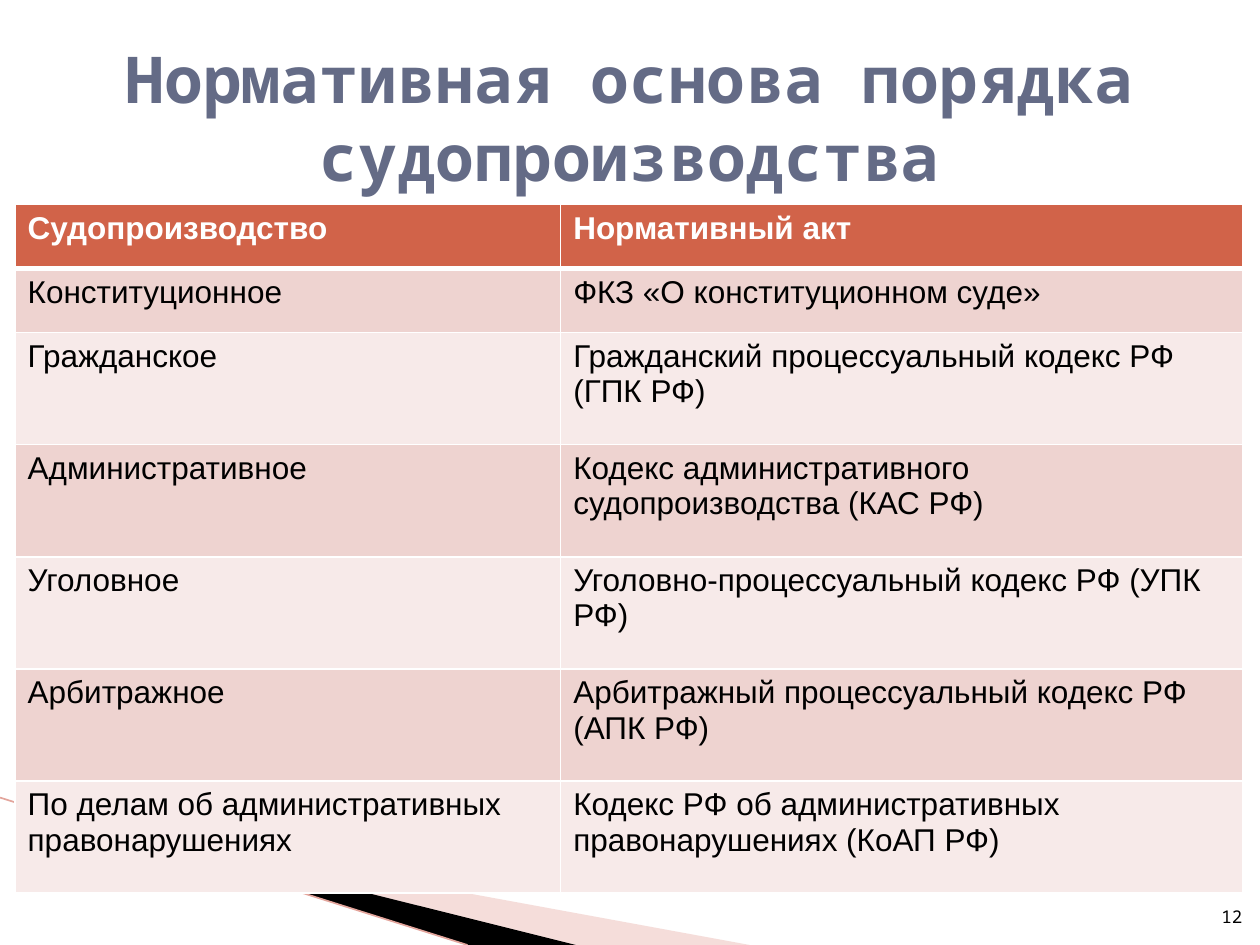
"""Build a slide listing the legal acts that govern each kind of court procedure."""
from dataclasses import dataclass

import lxml.etree
import pptx
import pptx.dml.color
import pptx.enum.shapes
import pptx.enum.text
import pptx.oxml.ns
import pptx.util
from pptx.util import Inches

COLORS = {
    "title": "646B86",
    "header": "D16349",
    "odd": "EED3D0",
    "even": "F7EAE9",
    "white": "FFFFFF",
    "black": "000000",
    "wedge": "E7ACA4",
    "edge": "E3A59C",
}
TITLE_FONT = "Noto Sans Mono"
TABLE_FONT = "Arial"


@dataclass
class Wedge:
    points: list[tuple[float, float]]
    color: str
    opacity: int = 100


@dataclass
class Procedure:
    kind: str
    act: str


WEDGES = [
    Wedge([(0.55, 6.51), (5.95, 7.5), (4.56, 7.5), (0.55, 6.5)], "wedge", 40),
    Wedge([(0.53, 6.49), (4.57, 7.5), (3.72, 7.5), (0.54, 6.5)], "black"),
]
PROCEDURES = [
    Procedure("Судопроизводство", "Нормативный акт"),
    Procedure("Конституционное", "ФКЗ «О конституционном суде»"),
    Procedure("Гражданское", "Гражданский процессуальный кодекс РФ (ГПК РФ)"),
    Procedure("Административное", "Кодекс административного судопроизводства (КАС РФ)"),
    Procedure("Уголовное", "Уголовно-процессуальный кодекс РФ (УПК РФ)"),
    Procedure("Арбитражное", "Арбитражный процессуальный кодекс РФ (АПК РФ)"),
    Procedure(
        "По делам об административных правонарушениях",
        "Кодекс РФ об административных правонарушениях (КоАП РФ)",
    ),
]


def rgb(name: str) -> pptx.dml.color.RGBColor:
    return pptx.dml.color.RGBColor.from_string(COLORS[name])


def add_element(parent, tag: str, **attributes: str):
    return lxml.etree.SubElement(parent, pptx.oxml.ns.qn(tag), **attributes)


def format_paragraph(paragraph, font: str, size: float, color: str, bold: bool, alignment) -> None:
    paragraph.alignment = alignment
    paragraph.font.name = font
    paragraph.font.size = pptx.util.Pt(size)
    paragraph.font.bold = bold
    paragraph.font.color.rgb = rgb(color)


def draw_wedge(slide, wedge: Wedge) -> None:
    points = [(Inches(x), Inches(y)) for x, y in wedge.points]
    builder = slide.shapes.build_freeform(*points[0])
    builder.add_line_segments(points[1:], close=True)
    shape = builder.convert_to_shape()
    shape.shadow.inherit = False
    shape.line.fill.background()
    shape.fill.solid()
    shape.fill.fore_color.rgb = rgb(wedge.color)
    if wedge.opacity < 100:
        color = shape.fill._xPr.find(".//" + pptx.oxml.ns.qn("a:srgbClr"))
        add_element(color, "a:alpha", val=str(wedge.opacity * 1000))


def draw_edge(slide) -> None:
    edge = slide.shapes.add_connector(
        pptx.enum.shapes.MSO_CONNECTOR.STRAIGHT, Inches(0), Inches(6.33), Inches(3.71), Inches(7.5)
    )
    edge.line.color.rgb = rgb("edge")
    edge.line.width = pptx.util.Pt(0.95)
    add_element(edge._element.spPr, "a:effectLst")


def draw_title(slide) -> None:
    title = slide.shapes.title
    title.left, title.top, title.width, title.height = map(Inches, (0.5, 0.3, 9, 1.25))
    frame = title.text_frame
    frame.text = "Нормативная основа порядка судопроизводства"
    frame.vertical_anchor = pptx.enum.text.MSO_ANCHOR.MIDDLE
    frame.auto_size = pptx.enum.text.MSO_AUTO_SIZE.NONE
    format_paragraph(
        frame.paragraphs[0], TITLE_FONT, 36.9, "title", True, pptx.enum.text.PP_ALIGN.CENTER
    )


def set_borders(cell, bottom: float) -> None:
    properties = cell._tc.get_or_add_tcPr()
    for side, width in (("L", 1), ("R", 1), ("T", 1), ("B", bottom)):
        border = add_element(properties, f"a:ln{side}", w=str(pptx.util.Pt(width)))
        fill = add_element(border, "a:solidFill")
        add_element(fill, "a:srgbClr", val=COLORS["white"])


def draw_table(slide, procedures: list[Procedure]) -> None:
    heights = [0.51] * 2 + [0.89] * (len(procedures) - 2)
    table = slide.shapes.add_table(
        len(procedures), 2, Inches(0.12), Inches(1.62), Inches(9.74), Inches(sum(heights))
    ).table
    for column, width in zip(table.columns, (4.33, 5.41)):
        column.width = Inches(width)
    for index, (procedure, height) in enumerate(zip(procedures, heights)):
        header = index == 0
        table.rows[index].height = Inches(height)
        fill = "header" if header else "odd" if index % 2 else "even"
        for cell, text in zip(table.rows[index].cells, (procedure.kind, procedure.act)):
            cell.text = text
            set_borders(cell, 3 if header else 1)
            cell.fill.solid()
            cell.fill.fore_color.rgb = rgb(fill)
            format_paragraph(
                cell.text_frame.paragraphs[0], TABLE_FONT, 18,
                "white" if header else "black", header, pptx.enum.text.PP_ALIGN.LEFT,
            )


def draw_page_number(slide, number: int) -> None:
    box = slide.shapes.add_textbox(Inches(9.46), Inches(7.01), Inches(0.4), Inches(0.4))
    frame = box.text_frame
    frame.word_wrap = True
    frame.margin_left = frame.margin_right = 0
    frame.vertical_anchor = pptx.enum.text.MSO_ANCHOR.BOTTOM
    frame.text = str(number)
    format_paragraph(
        frame.paragraphs[0], TITLE_FONT, 10, "black", False, pptx.enum.text.PP_ALIGN.RIGHT
    )


def main() -> None:
    presentation = pptx.Presentation()
    presentation.slide_width, presentation.slide_height = Inches(10), Inches(7.5)
    slide = presentation.slides.add_slide(presentation.slide_layouts[5])
    for wedge in WEDGES:
        draw_wedge(slide, wedge)
    draw_edge(slide)
    draw_table(slide, PROCEDURES)
    draw_title(slide)
    draw_page_number(slide, 12)
    presentation.save("out.pptx")


if __name__ == "__main__":
    main()
